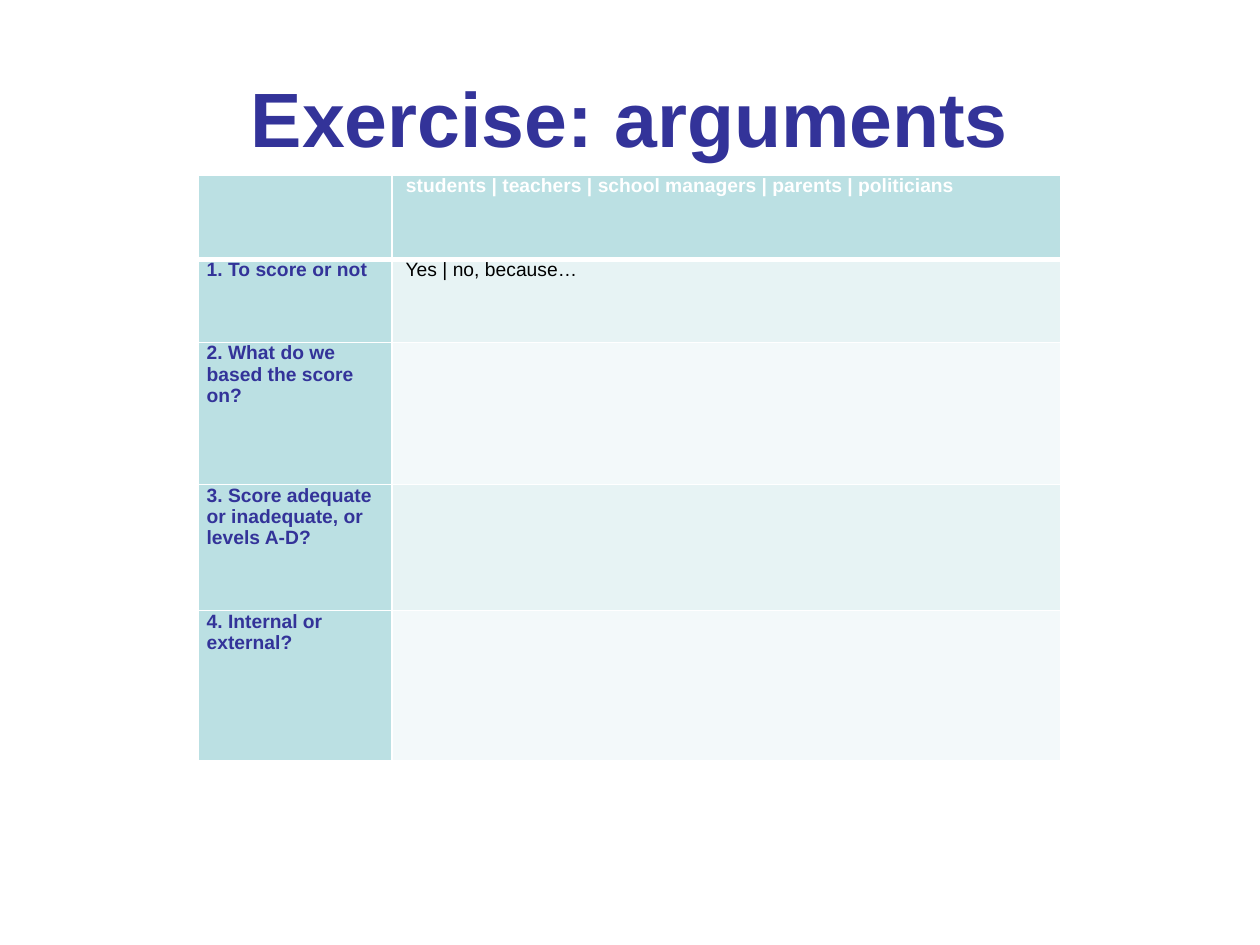
from lxml.etree import SubElement
from pptx import Presentation
from pptx.dml.color import RGBColor
from pptx.enum.text import MSO_ANCHOR, PP_ALIGN
from pptx.oxml.ns import qn
from pptx.util import Inches, Pt

WIDTH, HEIGHT = 10, 7.5
INDIGO, WHITE, BLACK, TEAL = "333399", "FFFFFF", "000000", "BBE0E3"
BANDS = ["E7F3F4", "F3F9FA"]
COLUMNS = [1.54, 5.31]
ROWS = [0.67, 0.66, 1.13, 1, 1.19]
ARGUMENTS = [
    ("", " students | teachers | school managers | parents | politicians"),
    ("1. To score or not", " Yes | no, because…"),
    ("2. What do we based the score on?", ""),
    ("3. Score adequate or inadequate, or levels A-D?", ""),
    ("4. Internal or external?", ""),
]


def colour(value):
    return RGBColor.from_string(value)


def assign(target, values):
    for name, value in values.items():
        setattr(target, name, value)


def place(left, top, width, height):
    return [Inches(share * side) for share, side in
            zip((left, top, width, height), (WIDTH, HEIGHT) * 2)]


def write(paragraph, words, size, shade, bold):
    run = paragraph.add_run()
    run.text = words
    assign(run.font, {"name": "Arial", "size": Pt(size), "bold": bold})
    run.font.color.rgb = colour(shade)


def add_title(slide, words):
    heading = slide.shapes.add_textbox(*place(0.05, 0.04, 0.9, 1 / 6)).text_frame
    assign(heading, {"word_wrap": True, "vertical_anchor": MSO_ANCHOR.MIDDLE})
    heading.paragraphs[0].alignment = PP_ALIGN.CENTER
    write(heading.paragraphs[0], words, 44, INDIGO, True)


def add_borders(cell, widths):
    properties = cell._tc.get_or_add_tcPr()
    for side, width in widths.items():
        border = SubElement(properties, qn(f"a:ln{side}"), w=str(Pt(width)))
        SubElement(SubElement(border, qn("a:solidFill")), qn("a:srgbClr"), val=WHITE)


def fill_cell(cell, row, column, words):
    assign(cell, {"margin_left": Inches(0.07), "margin_right": Inches(0.07),
                  "margin_top": 0, "margin_bottom": 0})
    add_borders(cell, {"L": 1, "R": 1, "T": 3 if row == 1 else 1,
                       "B": 3 if row == 0 else 1})
    is_heading = row == 0 or column == 0
    cell.fill.solid()
    cell.fill.fore_color.rgb = colour(TEAL if is_heading else BANDS[(row - 1) % 2])
    if words:
        paragraph = cell.text_frame.paragraphs[0]
        paragraph.space_after = Pt(6)
        shade = WHITE if row == 0 else INDIGO if column == 0 else BLACK
        write(paragraph, words, 11, shade, is_heading)


def add_arguments(slide):
    frame = place(0.157, 0.185, sum(COLUMNS) / WIDTH, sum(ROWS) / HEIGHT)
    grid = slide.shapes.add_table(len(ROWS), len(COLUMNS), *frame).table
    for column, width in zip(grid.columns, COLUMNS):
        column.width = Inches(width)
    for row, height in zip(grid.rows, ROWS):
        row.height = Inches(height)
    for row, entries in enumerate(ARGUMENTS):
        for column, words in enumerate(entries):
            fill_cell(grid.cell(row, column), row, column, words)


def main():
    deck = Presentation()
    assign(deck, {"slide_width": Inches(WIDTH), "slide_height": Inches(HEIGHT)})
    slide = deck.slides.add_slide(deck.slide_layouts[6])
    add_title(slide, "Exercise: arguments")
    add_arguments(slide)
    deck.save("out.pptx")


if __name__ == "__main__":
    main()
